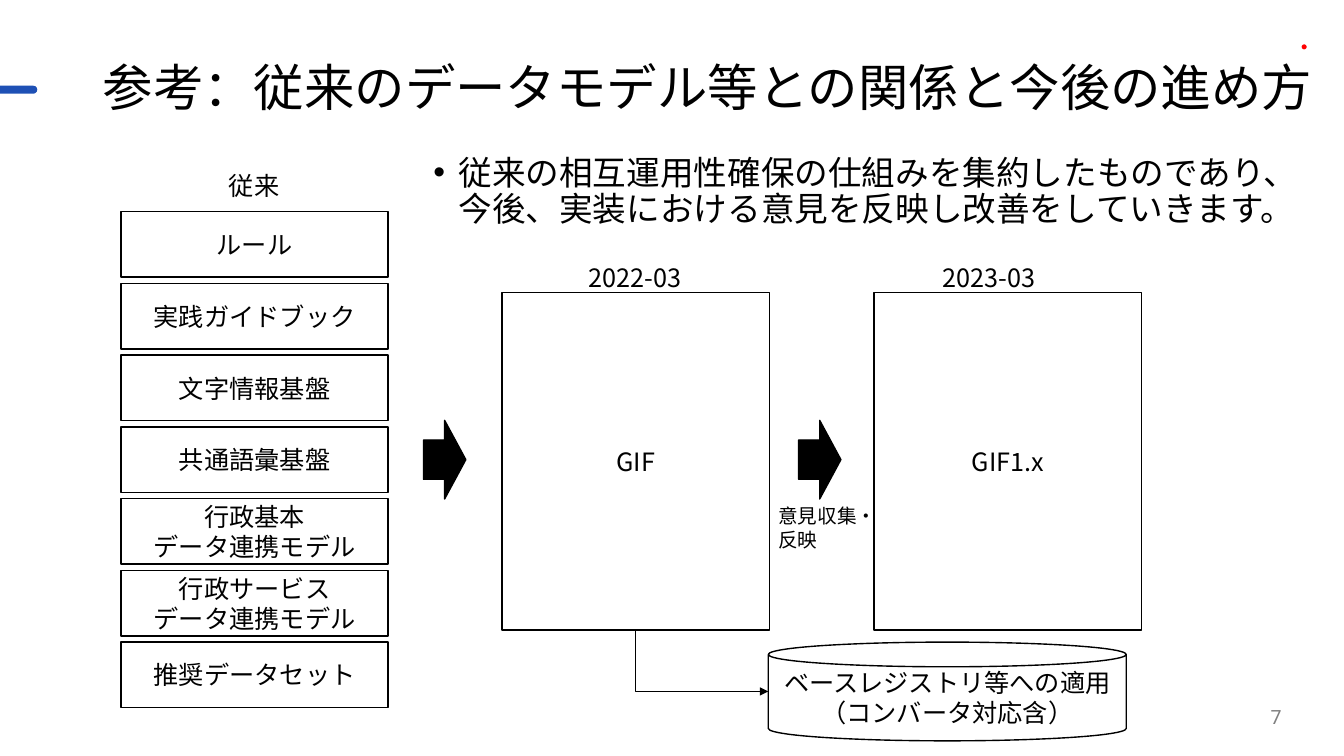
from lxml.etree import SubElement
from pptx import Presentation
from pptx.dml.color import RGBColor
from pptx.enum.shapes import MSO_CONNECTOR, MSO_SHAPE
from pptx.enum.text import MSO_ANCHOR, PP_ALIGN
from pptx.oxml.ns import qn
from pptx.util import Inches, Pt

# Content
TITLE = "参考：従来のデータモデル等との関係と今後の進め方"
SUMMARY = "従来の相互運用性確保の仕組みを集約したものであり、今後、実装における意見を反映し改善をしていきます。"
PAST_LABEL = "従来"
PAST_ITEMS = [
    "ルール",
    "実践ガイドブック",
    "文字情報基盤",
    "共通語彙基盤",
    "行政基本\nデータ連携モデル",
    "行政サービス\nデータ連携モデル",
    "推奨データセット",
]
# Release date, name, left edge of the box, left edge of the date
RELEASES = [("2022-03", "GIF", 4.98, 5.67), ("2023-03", "GIF1.x", 8.67, 9.18)]
FEEDBACK = "意見収集・反映"
REGISTRY = "ベースレジストリ等への適用\n（コンバータ対応含）"
PAGE_NUMBER = "7"

COLORS = {"ink": "000000", "paper": "FFFFFF", "accent": "1E50B5",
          "dot": "FF0000", "number": "808080"}
JAPANESE, LATIN = "Noto Sans CJK JP", "Roboto"

# Grid, in inches
SLIDE_WIDTH, SLIDE_HEIGHT = 13.33, 7.5
BOX_WIDTH, ITEM_HEIGHT, RELEASE_HEIGHT = 2.65, 0.65, 3.35
PAST_LEFT, PAST_TOP, PAST_BOTTOM = 1.2, 2.1, 7.02
ROW_STEP = (PAST_BOTTOM - PAST_TOP - ITEM_HEIGHT) / (len(PAST_ITEMS) - 1)
RELEASE_TOP = 2.9
LABEL_WIDTH, LABEL_HEIGHT = 1.26, 0.4
ARROW_LEFTS, ARROW_TOP, ARROW_SIZE = (4.2, 7.92), 4.17, (0.42, 0.78)
REGISTRY_LEFT, REGISTRY_TOP, REGISTRY_SIZE = 7.62, 6.37, (3.55, 0.98)


def color(name):
    return RGBColor.from_string(COLORS[name])


def write(shape, text, size=18, align=PP_ALIGN.CENTER, anchor=MSO_ANCHOR.MIDDLE,
          font=JAPANESE, ink="ink"):
    frame = shape.text_frame
    frame.word_wrap = True
    frame.vertical_anchor = anchor
    frame.text = text
    for para in frame.paragraphs:
        para.alignment = align
        for span in para.runs:
            span.font.size = Pt(size)
            span.font.name = font
            span.font.color.rgb = color(ink)
            east_asian = SubElement(span.font._element, qn("a:ea"))
            east_asian.set("typeface", JAPANESE)
    return frame.paragraphs[0]


def add_text(page, area, text, **style):
    box = page.shapes.add_textbox(*map(Inches, area))
    return write(box, text, **style)


def add_figure(page, preset, area, fill="paper", line="ink", text=None):
    shape = page.shapes.add_shape(preset, *map(Inches, area))
    shape.shadow.inherit = False
    shape.fill.solid()
    shape.fill.fore_color.rgb = color(fill)
    if line:
        shape.line.color.rgb = color(line)
        shape.line.width = Pt(1)
    else:
        shape.line.fill.background()
    if text:
        write(shape, text)
    return shape


def add_bullet(para, indent):
    properties = para._p.get_or_add_pPr()
    properties.set("marL", str(Inches(indent)))
    properties.set("indent", str(-Inches(indent)))
    SubElement(properties, qn("a:buFont")).set("typeface", "Arial")
    SubElement(properties, qn("a:buChar")).set("char", "•")


def add_down_then_right_arrow(page, start, end):
    # A single-bend connector turned by 270 degrees: its own width runs downwards
    across, down = end[0] - start[0], end[1] - start[1]
    middle_x, middle_y = start[0] + across / 2, start[1] + down / 2
    left, top = middle_x - down / 2, middle_y - across / 2
    link = page.shapes.add_connector(
        MSO_CONNECTOR.ELBOW,
        *map(Inches, (left, top, left + down, top + across)))
    link.line.color.rgb = color("ink")
    link.line.width = Pt(0.5)
    properties = link._element.spPr
    properties.find(qn("a:prstGeom")).set("prst", "bentConnector2")
    frame = properties.find(qn("a:xfrm"))
    frame.set("rot", str(270 * 60000))
    frame.set("flipH", "1")
    SubElement(properties.find(qn("a:ln")), qn("a:tailEnd")).set("type", "triangle")
    SubElement(properties, qn("a:effectLst"))


def main():
    deck = Presentation()
    deck.slide_width, deck.slide_height = Inches(SLIDE_WIDTH), Inches(SLIDE_HEIGHT)
    page = deck.slides.add_slide(deck.slide_layouts[6])

    # Decoration, title and summary
    bar = add_figure(page, MSO_SHAPE.ROUNDED_RECTANGLE, (-0.1, 0.85, 0.47, 0.08),
                     "accent", None)
    bar.adjustments[0] = 0.5
    add_figure(page, MSO_SHAPE.OVAL, (12.91, 0.44, 0.05, 0.05), "dot", None)
    title = add_text(page, (0.92, 0.3, 12.32, 1.19), TITLE, size=36,
                     align=PP_ALIGN.LEFT, font=LATIN)
    summary = add_text(page, (4.2, 1.5, 8.94, 0.65), SUMMARY, size=24,
                       align=PP_ALIGN.LEFT, anchor=MSO_ANCHOR.TOP)
    title.line_spacing = summary.line_spacing = 0.9
    add_bullet(summary, 0.25)

    # Existing building blocks
    add_text(page, (1.89, 1.64, LABEL_WIDTH, LABEL_HEIGHT), PAST_LABEL)
    for row, item in enumerate(PAST_ITEMS):
        add_figure(page, MSO_SHAPE.RECTANGLE,
                   (PAST_LEFT, PAST_TOP + row * ROW_STEP, BOX_WIDTH, ITEM_HEIGHT),
                   text=item)

    # Releases and the arrows leading to them
    for date, name, left, date_left in RELEASES:
        add_figure(page, MSO_SHAPE.RECTANGLE,
                   (left, RELEASE_TOP, BOX_WIDTH, RELEASE_HEIGHT), text=name)
        add_text(page, (date_left, 2.55, LABEL_WIDTH, LABEL_HEIGHT), date)
    for left in ARROW_LEFTS:
        add_figure(page, MSO_SHAPE.RIGHT_ARROW, (left, ARROW_TOP, *ARROW_SIZE), "ink")
    add_text(page, (7.62, 4.95, LABEL_WIDTH, 0.57), FEEDBACK, size=14,
             align=PP_ALIGN.LEFT, anchor=MSO_ANCHOR.TOP)

    # Registry fed by the first release
    add_figure(page, MSO_SHAPE.CAN, (REGISTRY_LEFT, REGISTRY_TOP, *REGISTRY_SIZE),
               text=REGISTRY)
    add_down_then_right_arrow(
        page,
        (RELEASES[0][2] + BOX_WIDTH / 2, RELEASE_TOP + RELEASE_HEIGHT),
        (REGISTRY_LEFT, REGISTRY_TOP + REGISTRY_SIZE[1] / 2))

    # Page number
    add_text(page, (9.81, 6.91, 3, 0.4), PAGE_NUMBER, size=14,
             align=PP_ALIGN.RIGHT, font=LATIN, ink="number")

    deck.save("out.pptx")


if __name__ == "__main__":
    main()
